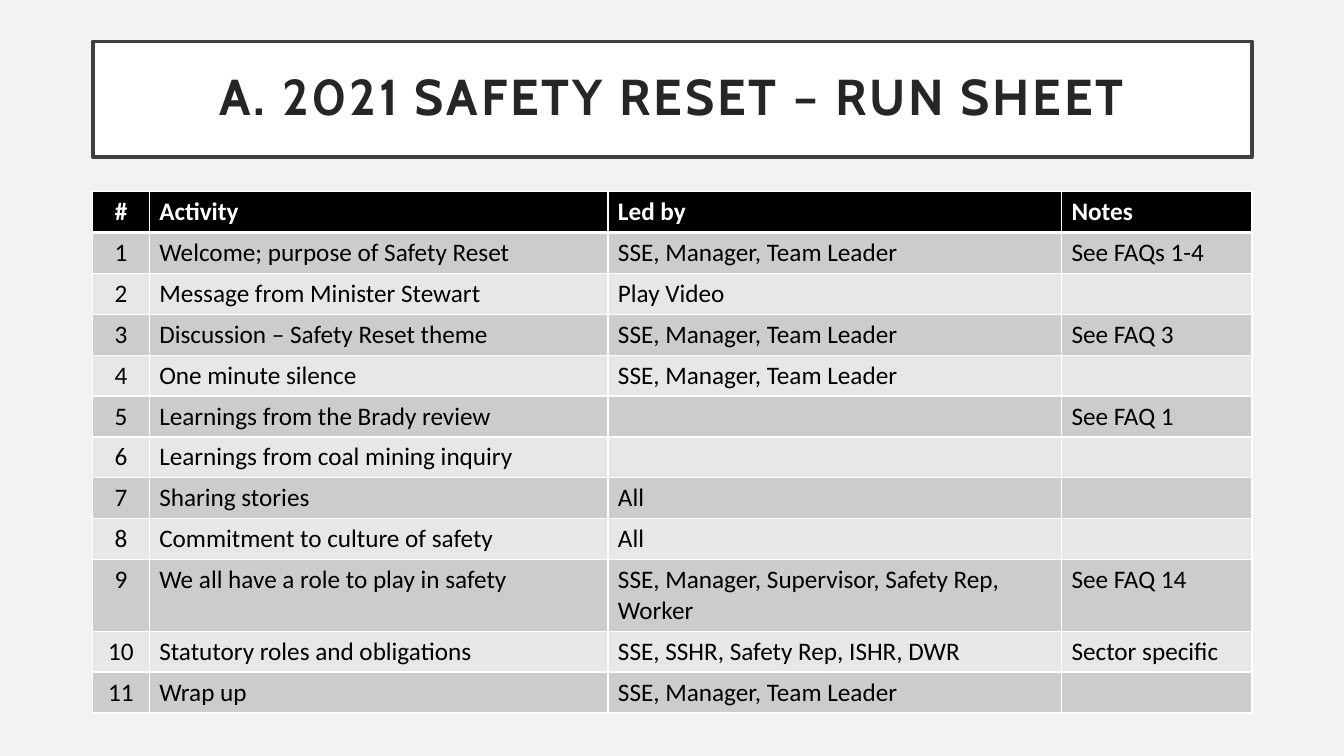
from lxml.etree import SubElement
from pptx import Presentation
from pptx.dml.color import RGBColor
from pptx.enum.text import MSO_ANCHOR, MSO_AUTO_SIZE, PP_ALIGN
from pptx.oxml.ns import qn
from pptx.util import Cm, Pt

COLOURS = {
    "page": "F2F2F2",
    "white": "FFFFFF",
    "black": "000000",
    "frame": "404040",
    "title": "262626",
    "odd row": "CCCCCC",
    "even row": "E7E7E7",
}
LEFT, WIDTH = 2.34, 29.21
ROW_HEIGHT = 1.03
COLUMN_WIDTHS = (1.42, 11.56, 11.43, 4.8)
HEADINGS = ("#", "Activity", "Led by", "Notes")
LEADERS = "SSE, Manager, Team Leader"
ACTIVITIES = (
    ("Welcome; purpose of Safety Reset", LEADERS, "See FAQs 1-4"),
    ("Message from Minister Stewart", "Play Video", ""),
    ("Discussion – Safety Reset theme", LEADERS, "See FAQ 3"),
    ("One minute silence", LEADERS, ""),
    ("Learnings from the Brady review", "", "See FAQ 1"),
    ("Learnings from coal mining inquiry", "", ""),
    ("Sharing stories", "All", ""),
    ("Commitment to culture of safety", "All", ""),
    ("We all have a role to play in safety",
     "SSE, Manager, Supervisor, Safety Rep, Worker", "See FAQ 14"),
    ("Statutory roles and obligations",
     "SSE, SSHR, Safety Rep, ISHR, DWR", "Sector specific"),
    ("Wrap up", LEADERS, ""),
)


def colour(name):
    return RGBColor.from_string(COLOURS[name])


class RunSheet:
    """Holds the current slide and the style of its title and table."""

    title_font, body_font = "Cabin", "Calibri"
    title_size, body_size = 36, 18

    def __init__(self, deck):
        self.page = deck.slides.add_slide(deck.slide_layouts[5])
        self.page.background.fill.solid()
        self.page.background.fill.fore_color.rgb = colour("page")

    def add_span(self, paragraph, text, font, size, ink, bold):
        span = paragraph.add_run()
        span.text = text
        span.font.name = font
        span.font.size = Pt(size)
        span.font.bold = bold
        span.font.color.rgb = colour(ink)
        return span

    def title(self, text, top, height):
        box = self.page.shapes.title
        box.left, box.top = Cm(LEFT), Cm(top)
        box.width, box.height = Cm(WIDTH), Cm(height)
        box.fill.solid()
        box.fill.fore_color.rgb = colour("white")
        box.line.color.rgb = colour("frame")
        box.line.width = Pt(2.5)
        frame = box.text_frame
        frame.word_wrap = True
        frame.auto_size = MSO_AUTO_SIZE.NONE
        frame.vertical_anchor = MSO_ANCHOR.MIDDLE
        frame.margin_left = frame.margin_right = Cm(0.5)
        frame.margin_top = frame.margin_bottom = Cm(0.5)
        paragraph = frame.paragraphs[0]
        paragraph.alignment = PP_ALIGN.CENTER
        paragraph.line_spacing = 0.9
        span = self.add_span(paragraph, text, self.title_font, self.title_size, "title", True)
        span._r.get_or_add_rPr().set("spc", "200")

    def borders(self, cell, row):
        """Draw white cell borders, thicker between heading and first row."""
        widths = {"L": 1, "R": 1, "T": 3 if row == 1 else 1, "B": 3 if row == 0 else 1}
        properties = cell._tc.get_or_add_tcPr()
        for side, width in widths.items():
            line = SubElement(properties, qn(f"a:ln{side}"), w=str(Pt(width)))
            fill = SubElement(line, qn("a:solidFill"))
            SubElement(fill, qn("a:srgbClr"), val=COLOURS["white"])

    def cell(self, cell, text, row, column):
        heading = row == 0
        self.borders(cell, row)
        cell.fill.solid()
        shade = "black" if heading else "odd row" if row % 2 else "even row"
        cell.fill.fore_color.rgb = colour(shade)
        paragraph = cell.text_frame.paragraphs[0]
        paragraph.alignment = PP_ALIGN.LEFT if column else PP_ALIGN.CENTER
        if text:
            ink = "white" if heading else "black"
            self.add_span(paragraph, text, self.body_font, self.body_size, ink, heading)

    def table(self, rows, top):
        table = self.page.shapes.add_table(
            len(rows), len(COLUMN_WIDTHS), Cm(LEFT), Cm(top),
            Cm(WIDTH), Cm(ROW_HEIGHT * len(rows))).table
        for column, width in zip(table.columns, COLUMN_WIDTHS):
            column.width = Cm(width)
        for row, texts in enumerate(rows):
            table.rows[row].height = Cm(ROW_HEIGHT)
            for column, text in enumerate(texts):
                self.cell(table.cell(row, column), text, row, column)


def main():
    deck = Presentation()
    deck.slide_width, deck.slide_height = Cm(33.87), Cm(19.05)
    sheet = RunSheet(deck)
    sheet.title("A. 2021 SAFETY RESET – RUN SHEET", top=1.04, height=2.92)
    numbered = [(str(number), *activity) for number, activity in enumerate(ACTIVITIES, 1)]
    sheet.table([HEADINGS, *numbered], top=4.83)
    deck.save("out.pptx")


if __name__ == "__main__":
    main()
